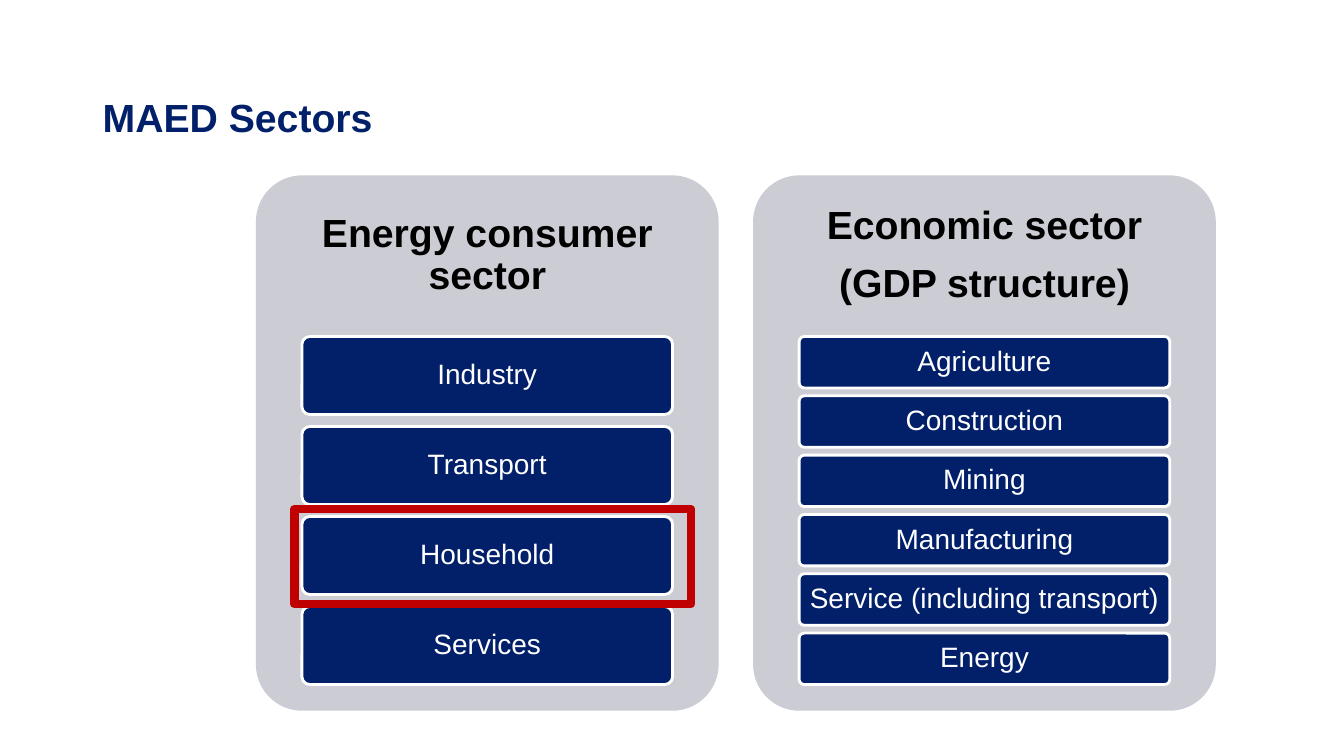
from pptx import Presentation
from pptx.dml.color import RGBColor
from pptx.enum.shapes import MSO_SHAPE
from pptx.enum.text import MSO_ANCHOR, PP_ALIGN
from pptx.util import Cm, Pt

ROUND = MSO_SHAPE.ROUNDED_RECTANGLE
RECT = MSO_SHAPE.RECTANGLE
MIDDLE = MSO_ANCHOR.MIDDLE
BOTTOM = MSO_ANCHOR.BOTTOM
LEFT = PP_ALIGN.LEFT
CENTER = PP_ALIGN.CENTER

NAVY = RGBColor(0x01, 0x20, 0x69)
GREY = RGBColor(0xCC, 0xCD, 0xD4)
WHITE = RGBColor(0xFF, 0xFF, 0xFF)
BLACK = RGBColor(0x00, 0x00, 0x00)
RED = RGBColor(0xC0, 0x00, 0x00)

PANEL_TOP = 4.42
PANEL_WIDTH = 11.66
BAR_TOP = 8.48
BAR_SPAN = 8.77
BAR_INDENT = 1.16
GAP_RATIO = 2 / 13

PANELS = [
    (6.45, ["Energy consumer sector"],
     ["Industry", "Transport", "Household", "Services"]),
    (18.98, ["Economic sector", "(GDP structure)"],
     ["Agriculture", "Construction", "Mining", "Manufacturing",
      "Service (including transport)", "Energy"]),
]


def write(shape, lines, size, color, bold, align, anchor, inset, after):
    frame = shape.text_frame
    frame.word_wrap = True
    frame.vertical_anchor = anchor
    frame.margin_left = frame.margin_right = Cm(inset)
    frame.margin_top = frame.margin_bottom = Cm(inset / 2)
    frame.text = "\n".join(lines)
    for para in frame.paragraphs:
        para.alignment = align
        para.line_spacing = 0.9
        para.space_after = Pt(after)
        for run in para.runs:
            run.font.name = "Arial"
            run.font.size = Pt(size)
            run.font.bold = bold
            run.font.color.rgb = color


def add_text(slide, box, lines, color, align, anchor, after):
    shape = slide.shapes.add_textbox(*map(Cm, box))
    write(shape, lines, 28, color, True, align, anchor, 0.25, after)


def add_block(slide, kind, box, fill, line, width):
    shape = slide.shapes.add_shape(kind, *map(Cm, box))
    shape.shadow.inherit = False
    if kind == ROUND:
        shape.adjustments[0] = 0.1
    if fill is None:
        shape.fill.background()
    else:
        shape.fill.solid()
        shape.fill.fore_color.rgb = fill
    if line is None:
        shape.line.fill.background()
    else:
        shape.line.color.rgb = line
        shape.line.width = Pt(width)
    return shape


def add_panel(slide, left, heading, labels):
    add_block(slide, ROUND, (left, PANEL_TOP, PANEL_WIDTH, 13.49),
              GREY, None, 0)
    add_text(slide, (left, PANEL_TOP, PANEL_WIDTH, 4.04), heading,
             BLACK, CENTER, MIDDLE, 11)
    count = len(labels)
    height = BAR_SPAN / (count + (count - 1) * GAP_RATIO)
    for i, label in enumerate(labels):
        top = BAR_TOP + i * height * (1 + GAP_RATIO)
        box = (left + BAR_INDENT, top, PANEL_WIDTH - 2 * BAR_INDENT, height)
        bar = add_block(slide, ROUND, box, NAVY, WHITE, 2)
        write(bar, [label], 20, WHITE, False, CENTER, MIDDLE, 0.15, 8)


def main():
    deck = Presentation()
    deck.slide_width = Cm(33.87)
    deck.slide_height = Cm(19.05)
    slide = deck.slides.add_slide(deck.slide_layouts[6])
    add_text(slide, (2.34, 0, 29.21, 3.68), ["MAED Sectors"],
             NAVY, LEFT, BOTTOM, 0)
    for left, heading, labels in PANELS:
        add_panel(slide, left, heading, labels)
    add_block(slide, RECT, (7.42, 12.83, 10, 2.39), None, RED, 6)
    deck.save("out.pptx")


if __name__ == "__main__":
    main()
